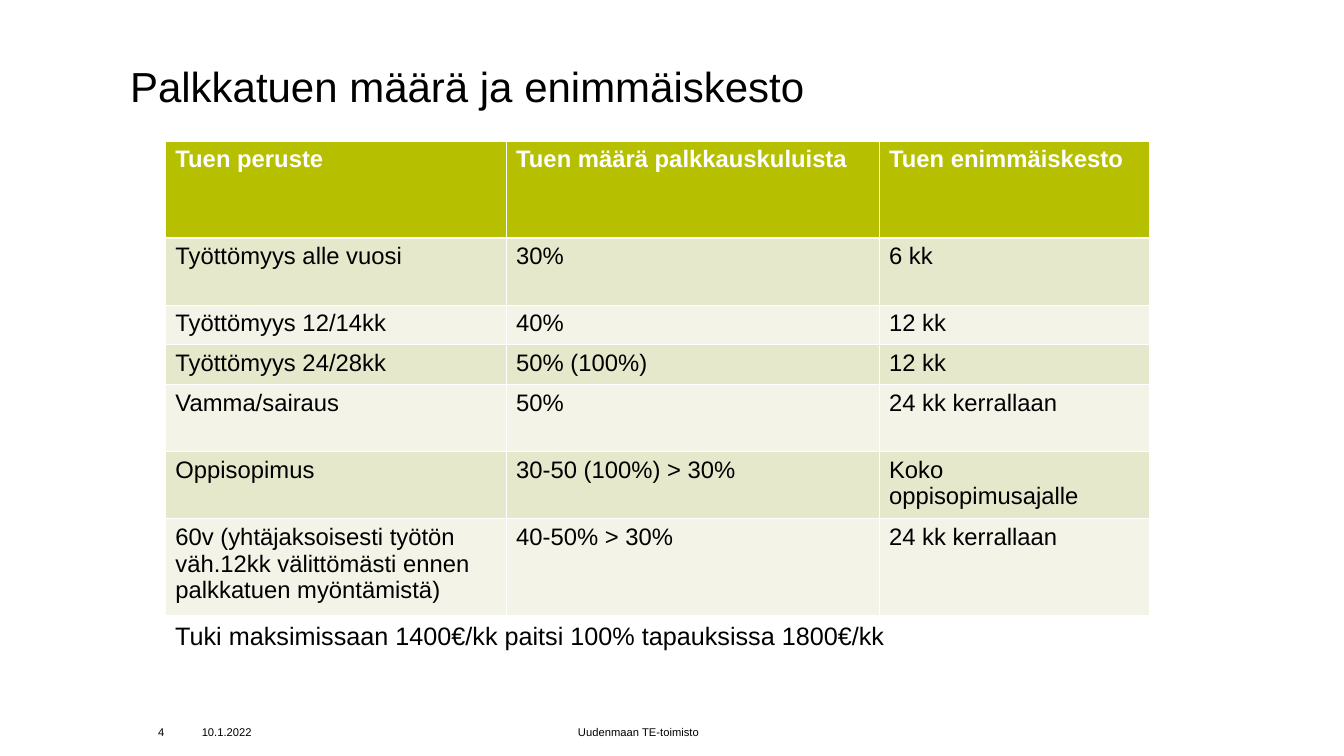
import pptx
import pptx.util
import pptx.dml.color
import pptx.enum.text
import pptx.oxml
import pptx.oxml.ns

Pt = pptx.util.Pt
Align = pptx.enum.text.PP_ALIGN
Anchor = pptx.enum.text.MSO_ANCHOR

# Content
TITLE = "Palkkatuen määrä ja enimmäiskesto"
ROWS = [
    ("Tuen peruste", "Tuen määrä palkkauskuluista", "Tuen enimmäiskesto"),
    ("Työttömyys alle vuosi", "30%", "6 kk"),
    ("Työttömyys 12/14kk", "40%", "12 kk"),
    ("Työttömyys 24/28kk", "50% (100%)", "12 kk"),
    ("Vamma/sairaus", "50%", "24 kk kerrallaan"),
    ("Oppisopimus", "30-50 (100%) > 30%", "Koko oppisopimusajalle"),
    ("60v (yhtäjaksoisesti työtön väh.12kk välittömästi ennen "
     "palkkatuen myöntämistä)", "40-50% > 30%", "24 kk kerrallaan"),
]
NOTE = "Tuki maksimissaan 1400€/kk paitsi 100% tapauksissa 1800€/kk"
# Footer: text, left, width, alignment
FOOTER = [
    ("4", 79.2, 38.2, Align.RIGHT),
    ("10.1.2022", 118.1, 87.8, Align.CENTER),
    ("Uudenmaan TE-toimisto", 205.9, 500.4, Align.CENTER),
]

THEME = {
    "font": "Arial", "text": "000000", "white": "FFFFFF",
    "head": "B6BF00", "bands": ("E5E8CB", "F3F4E7"),
    "title": 30, "cell": 17, "note": 18, "foot": 8,
    "thin": 0.65, "thick": 1.94,
}

# Layout in points
LEFT, TOP = 118.1, 100.8
WIDTHS = [243.4, 266.4, 193.2]
HEIGHTS = [69, 48.2, 28.3, 28.3, 47.8, 48.2, 69]


def color(name):
    return pptx.dml.color.RGBColor.from_string(name)


def write(frame, text, size, ink=THEME["text"], bold=False, align=Align.LEFT):
    frame.word_wrap = True
    para = frame.paragraphs[0]
    para.text = text
    para.alignment = align
    font = para.font
    font.name, font.size, font.bold = THEME["font"], Pt(size), bold
    font.color.rgb = color(ink)


def place(shape, left, top, width, height):
    shape.left, shape.top = Pt(left), Pt(top)
    shape.width, shape.height = Pt(width), Pt(height)


def border(cell, side, width):
    line = pptx.oxml.parse_xml(
        f'<a:{side} {pptx.oxml.ns.nsdecls("a")} w="{int(Pt(width))}">'
        f'<a:solidFill><a:srgbClr val="{THEME["white"]}"/></a:solidFill>'
        f'</a:{side}>')
    cell._tc.get_or_add_tcPr().append(line)


def style(cell, row):
    # Borders come before the fill in the cell properties
    for side in ("lnL", "lnR", "lnT", "lnB"):
        thick = (row, side) in ((0, "lnB"), (1, "lnT"))
        border(cell, side, THEME["thick" if thick else "thin"])
    cell.fill.solid()
    fill = THEME["bands"][(row - 1) % 2] if row else THEME["head"]
    cell.fill.fore_color.rgb = color(fill)


def main():
    deck = pptx.Presentation()
    deck.slide_width, deck.slide_height = Pt(960), Pt(540)
    slide = deck.slides.add_slide(deck.slide_layouts[5])

    # Title
    title = slide.shapes.title
    place(title, 85.7, 39.6, 735.1, 87.8)
    title.text_frame.vertical_anchor = Anchor.TOP
    write(title.text_frame, TITLE, THEME["title"])

    # Table
    frame = slide.shapes.add_table(
        len(ROWS), len(WIDTHS), Pt(LEFT), Pt(TOP),
        Pt(sum(WIDTHS)), Pt(sum(HEIGHTS)))
    table = frame.table
    for col, width in zip(table.columns, WIDTHS):
        col.width = Pt(width)
    for row, height in zip(table.rows, HEIGHTS):
        row.height = Pt(height)
    for r, texts in enumerate(ROWS):
        for c, text in enumerate(texts):
            cell = table.cell(r, c)
            style(cell, r)
            ink = THEME["text" if r else "white"]
            write(cell.text_frame, text, THEME["cell"], ink, bold=r == 0)

    # Note under the table
    note = slide.shapes.add_textbox(
        Pt(LEFT), Pt(TOP + sum(HEIGHTS)), Pt(583.2), Pt(28.8))
    write(note.text_frame, NOTE, THEME["note"])

    # Footer
    for text, left, width, align in FOOTER:
        box = slide.shapes.add_textbox(Pt(left), Pt(515.5), Pt(width), Pt(15.1))
        body = box.text_frame
        body.margin_left = body.margin_right = 0
        body.margin_top = body.margin_bottom = 0
        body.vertical_anchor = Anchor.MIDDLE
        write(body, text, THEME["foot"], align=align)

    deck.save("out.pptx")


if __name__ == "__main__":
    main()
